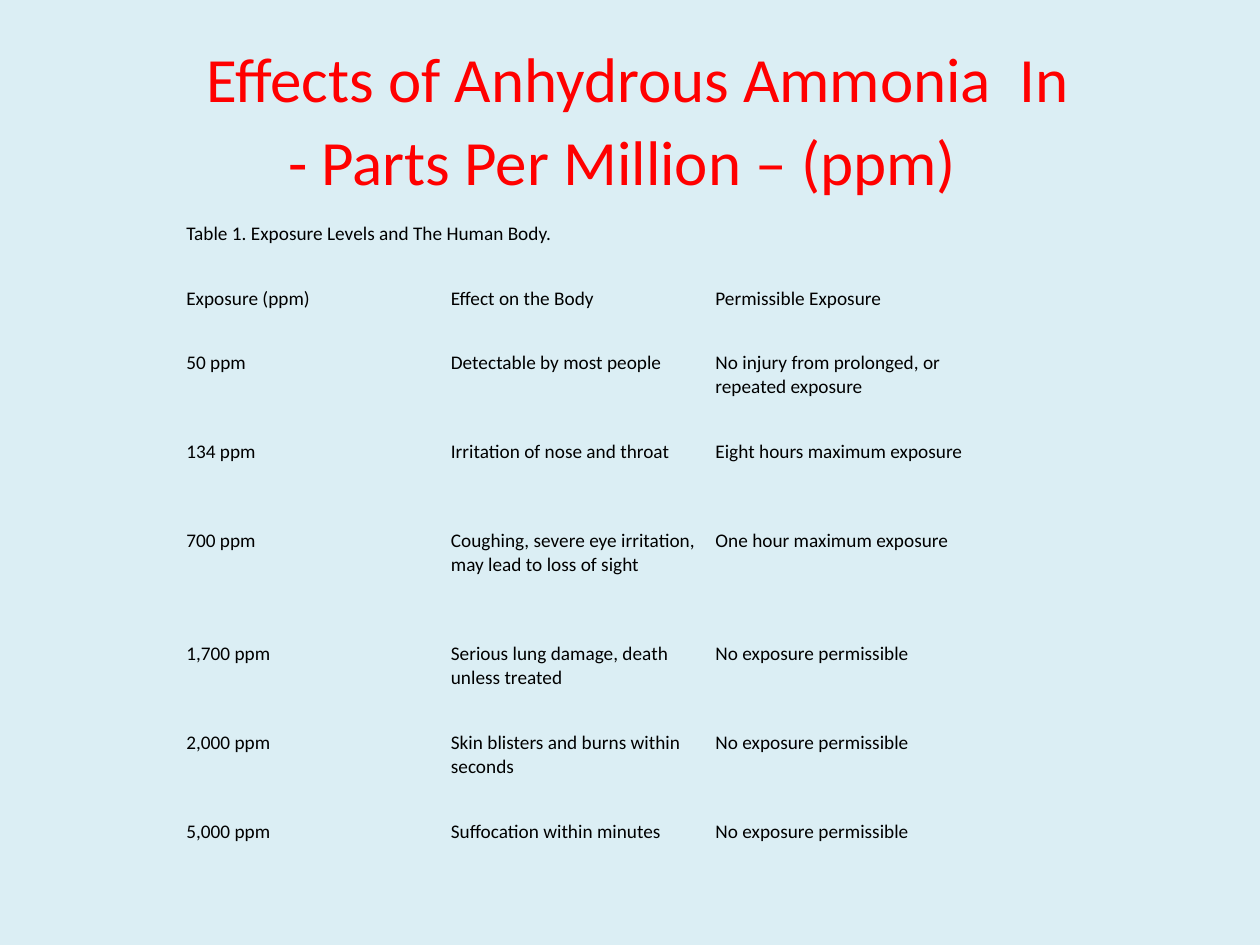
import pptx
import pptx.dml.color
import pptx.enum.text
import pptx.oxml.ns
import pptx.util
from lxml import etree

Pt = pptx.util.Pt
RGB = pptx.dml.color.RGBColor.from_string
Anchor = pptx.enum.text.MSO_ANCHOR
qn = pptx.oxml.ns.qn

# Content
TITLE_LINES = ["Effects of Anhydrous Ammonia  In", "- Parts Per Million – (ppm)"]
CAPTION = "Table 1. Exposure Levels and The Human Body."
HEADINGS = ("Exposure (ppm)", "Effect on the Body", "Permissible Exposure")
# Each exposure level with the line count of its row
LEVELS = [
    (("50 ppm", "Detectable by most people",
      "No injury from prolonged, or repeated exposure"), 2),
    (("134 ppm", "Irritation of nose and throat", "Eight hours maximum exposure"), 2),
    (("700 ppm", "Coughing, severe eye irritation, may lead to loss of sight",
      "One hour maximum exposure"), 3),
    (("1,700 ppm", "Serious lung damage, death unless treated",
      "No exposure permissible"), 2),
    (("2,000 ppm", "Skin blisters and burns within seconds",
      "No exposure permissible"), 2),
    (("5,000 ppm", "Suffocation within minutes", "No exposure permissible"), 1),
]
# Spacer rows follow every row; those after 50 and 134 ppm share its extra line
SPACER_HEIGHT = 18.5

THEME = {
    "font": "Calibri",
    "background": "DBEEF4", "title": "FF0000", "title_edge": "006600", "body": "000000",
    "title_size": 36, "edge_size": 39.6, "body_size": 11,
}
ROW_HEIGHTS = {1: 18.5, 2: 32.4, 3: 46}
TABLE_LEFT, TABLE_TOP, COLUMN_WIDTH = 102.2, 124.6, 151.2
MARGIN_X, MARGIN_Y = 4.3, 2.2
NO_STYLE_NO_GRID = "{2D5ABB26-0587-4C30-8999-92F81FD0307C}"


def format_font(font, size, color):
    font.name = THEME["font"]
    font.size = Pt(size)
    font.color.rgb = RGB(color)


def add_title(slide):
    title = slide.shapes.title
    title.left, title.top, title.width, title.height = Pt(36), Pt(21.6), Pt(648), Pt(90)
    frame = title.text_frame
    frame.auto_size = pptx.enum.text.MSO_AUTO_SIZE.NONE
    frame.word_wrap = True
    frame.vertical_anchor = Anchor.MIDDLE
    paragraph = frame.paragraphs[0]
    paragraph.alignment = pptx.enum.text.PP_ALIGN.CENTER
    # Larger spaces at both ends offset the two centred lines
    for text in (" ", TITLE_LINES[0], None, TITLE_LINES[1], " "):
        if text is None:
            paragraph.add_line_break()
            continue
        run = paragraph.add_run()
        run.text = text
        edge = text == " "
        format_font(run.font, THEME["edge_size" if edge else "title_size"],
                    THEME["title_edge" if edge else "title"])


def format_cell(cell, text, anchor):
    cell.fill.background()
    cell.margin_left = cell.margin_right = Pt(MARGIN_X)
    cell.margin_top = cell.margin_bottom = Pt(MARGIN_Y)
    cell.vertical_anchor = anchor
    paragraph = cell.text_frame.paragraphs[0]
    if text:
        paragraph.text = text
        format_font(paragraph.runs[0].font, THEME["body_size"], THEME["body"])
    else:
        # Empty cells keep the small type size so that rows stay low
        end = etree.SubElement(cell.text_frame.paragraphs[0]._p, qn("a:endParaRPr"))
        end.set("sz", str(THEME["body_size"] * 100))


def add_exposure_table(slide):
    rows = []
    for texts, lines in [((CAPTION,), 1), (HEADINGS, 1)] + LEVELS:
        rows += [(texts, ROW_HEIGHTS[lines]), ((), SPACER_HEIGHT)]
    # The 134 ppm row needs one line only; its spacer stays as low as the others
    columns = len(HEADINGS)
    frame = slide.shapes.add_table(
        len(rows), columns, Pt(TABLE_LEFT), Pt(TABLE_TOP),
        Pt(COLUMN_WIDTH * columns), Pt(sum(height for _, height in rows)))
    table = frame.table
    table.first_row = table.horz_banding = False
    next(frame.element.iter(qn("a:tableStyleId"))).text = NO_STYLE_NO_GRID
    for column in table.columns:
        column.width = Pt(COLUMN_WIDTH)
    for index, (texts, height) in enumerate(rows):
        table.rows[index].height = Pt(height)
        anchor = Anchor.MIDDLE if index < 4 and texts else Anchor.TOP
        for position in range(columns):
            text = texts[position] if position < len(texts) else ""
            format_cell(table.cell(index, position), text, anchor)
        # Caption and spacers span the full width
        if len(texts) < columns:
            table.cell(index, 0).merge(table.cell(index, columns - 1))


def main():
    presentation = pptx.Presentation()
    presentation.slide_width, presentation.slide_height = Pt(720), Pt(540)
    slide = presentation.slides.add_slide(presentation.slide_layouts[5])
    slide.background.fill.solid()
    slide.background.fill.fore_color.rgb = RGB(THEME["background"])
    add_title(slide)
    add_exposure_table(slide)
    presentation.save("out.pptx")


if __name__ == "__main__":
    main()
